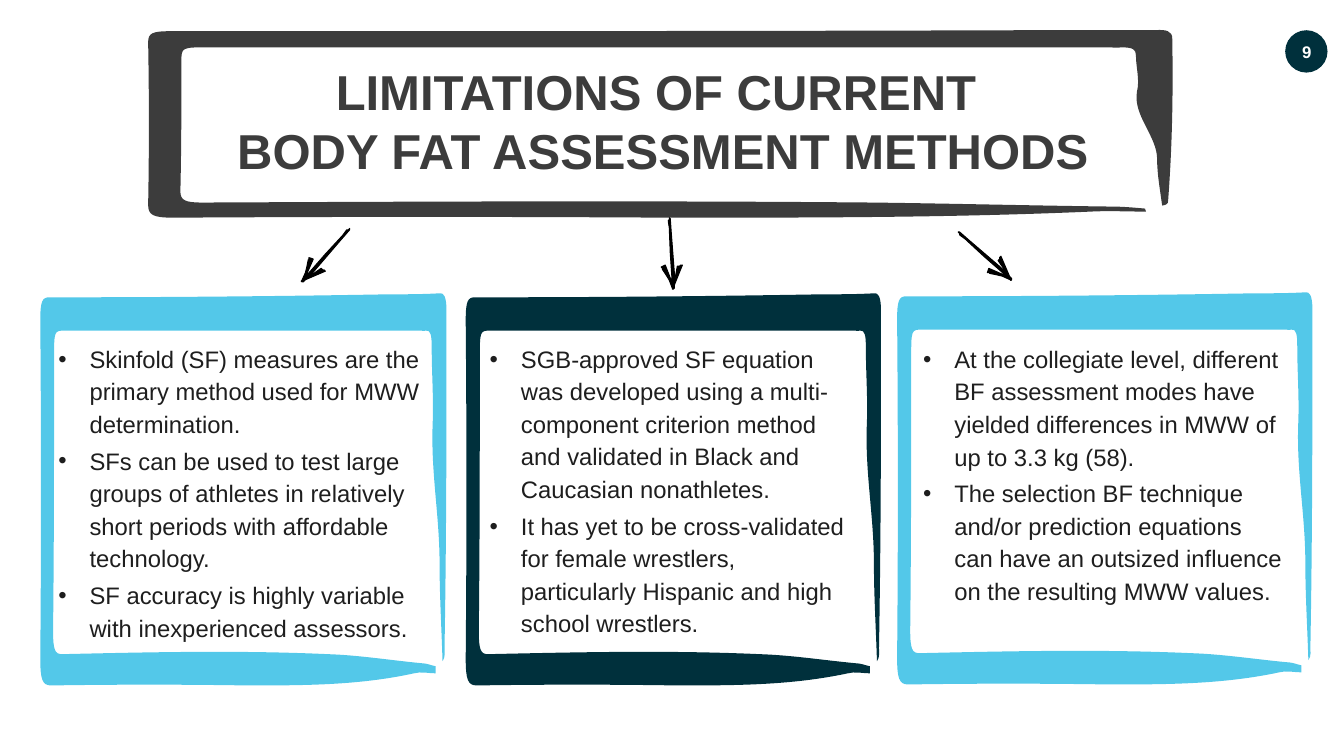
"""Build a slide on the limitations of current body fat assessment methods."""
from dataclasses import dataclass

from lxml import etree
from pptx import Presentation
from pptx.dml.color import RGBColor
from pptx.enum.shapes import MSO_SHAPE
from pptx.enum.text import MSO_ANCHOR, PP_ALIGN
from pptx.oxml.ns import qn
from pptx.util import Pt

CENTER, LEFT = PP_ALIGN.CENTER, PP_ALIGN.LEFT
TOP, MIDDLE = MSO_ANCHOR.TOP, MSO_ANCHOR.MIDDLE
OVAL = MSO_SHAPE.OVAL
PX = 9144
SLIDE_SIZE = (1333.33, 750)
BULLET_INDENT = 31


@dataclass(frozen=True)
class Theme:
    """Colours, font and type sizes."""
    font: str = "Arial"
    charcoal: str = "3C3C3C"
    sky: str = "53C8E9"
    navy: str = "00303C"
    ink: str = "1E1E1E"
    black: str = "000000"
    white: str = "FFFFFF"
    title_size: float = 35
    title_leading: float = 42
    body_size: float = 17
    body_leading: float = 23.25
    body_gap: float = 3
    number_size: float = 12
    arrow_line: float = 0.75


THEME = Theme()

TITLE = ["LIMITATIONS OF CURRENT ", "BODY FAT ASSESSMENT METHODS"]
TITLE_AREA = (170, 56, 976, 128)
PAGE_NUMBER = "9"
BADGE_AREA = (1275, 30, 42, 42)
NUMBER_AREA = (1265, 31, 63, 40)

CARDS = [
    {"corner": (40, 290), "width": 403, "color": THEME.sky, "text_area": (48, 333, 381, 310),
     "points": [
         "Skinfold (SF) measures are the primary method used for MWW determination.",
         "SFs can be used to test large groups of athletes in relatively short periods "
         "with affordable technology.",
         "SF accuracy is highly variable with inexperienced assessors."]},
    {"corner": (462, 290), "width": 412, "color": THEME.navy, "text_area": (476, 333, 382, 304),
     "points": [
         "SGB-approved SF equation was developed using a multi-component criterion method "
         "and validated in Black and Caucasian nonathletes.",
         "It has yet to be cross-validated for female wrestlers, particularly Hispanic "
         "and high school wrestlers."]},
    {"corner": (890, 289), "width": 412, "color": THEME.sky, "text_area": (906, 333, 379, 272),
     "points": [
         "At the collegiate level, different BF assessment modes have yielded differences "
         "in MWW of up to 3.3 kg (58).",
         "The selection BF technique and/or prediction equations can have an outsized "
         "influence on the resulting MWW values."]},
]

ARROWS = [((656, 216), 0), ((967, 218), 315), ((313, 218), 45)]

BANNER_CURVES = [
    (1137, 210),
    (1119, 210), (1100, 209), (1082, 210), (943, 216), (804, 216), (665, 216),
    (501, 215), (337, 215), (172, 216), (151, 216), (147, 213), (147, 203),
    (148, 150), (148, 96), (147, 42), (147, 33), (151, 31), (169, 31),
    (453, 31), (736, 31), (1020, 30), (1061, 30), (1103, 30), (1146, 30),
    (1157, 29), (1163, 31), (1163, 38), (1164, 91), (1163, 145), (1159, 198),
    (1159, 200), (1160, 203), (1153, 204), (1151, 189), (1148, 173), (1148, 158),
    (1148, 135), (1124, 115), (1128, 91), (1131, 79), (1127, 67), (1127, 55),
    (1127, 49), (1124, 47), (1112, 47), (1109, 48), (1104, 47), (1100, 47),
    (802, 47), (505, 47), (208, 47), (180, 47), (180, 47), (180, 61),
    (180, 104), (180, 147), (179, 190), (179, 199), (184, 201), (201, 201),
    (423, 200), (645, 199), (866, 201), (945, 202), (1024, 204), (1102, 205),
    (1114, 205), (1125, 206), (1136, 207), (1136, 208), (1137, 209), (1137, 210),
]
CARD_WIDTH = 412
CARD_CURVES = [
    (401, 378),
    (394, 378), (386, 376), (379, 378), (323, 390), (267, 390), (210, 390),
    (144, 389), (77, 389), (11, 390), (2, 390), (0, 384), (0, 363),
    (1, 252), (1, 140), (0, 28), (0, 9), (2, 5), (9, 5),
    (124, 5), (239, 4), (354, 2), (371, 2), (387, 2), (405, 1),
    (409, 0), (412, 4), (412, 18), (412, 130), (412, 242), (410, 353),
    (410, 357), (411, 362), (408, 366), (407, 333), (405, 301), (405, 270),
    (405, 221), (396, 179), (398, 130), (399, 105), (397, 80), (397, 54),
    (397, 43), (396, 37), (391, 38), (390, 39), (388, 38), (386, 38),
    (266, 38), (145, 38), (25, 38), (14, 38), (14, 38), (14, 67),
    (14, 157), (14, 246), (13, 336), (13, 355), (15, 359), (22, 359),
    (112, 357), (202, 355), (292, 359), (323, 360), (355, 365), (387, 368),
    (392, 368), (396, 370), (401, 371), (401, 374), (401, 376), (401, 378),
]
ARROW_POINTS = [
    (21, 47), (13, 67), (13, 70), (12, 71), (11, 71), (11, 70), (8, 62), (5, 57),
    (1, 51), (2, 51), (0, 49), (2, 48), (3, 50), (2, 48), (4, 47), (11, 65),
    (9, 35), (8, 10), (7, 3), (8, 2), (8, 0), (9, 1), (10, 15), (13, 54),
    (13, 61), (14, 59), (16, 48), (18, 48), (16, 54), (18, 50), (19, 47),
]


def rgb(color):
    """Turn a hex string into a colour."""
    return RGBColor.from_string(color)


def paint(shape, color):
    """Give a shape a flat fill without line or shadow."""
    shape.shadow.inherit = False
    shape.fill.solid()
    shape.fill.fore_color.rgb = rgb(color)
    shape.line.fill.background()


def add_outline(page, points, corner, color, stretch=1):
    """Draw a closed outline from points relative to a corner."""
    placed = [(round((corner[0] + x * stretch) * PX), (corner[1] + y) * PX) for x, y in points]
    builder = page.shapes.build_freeform(*placed[0])
    builder.add_line_segments(placed[1:], close=True)
    shape = builder.convert_to_shape()
    paint(shape, color)
    return shape


def add_curved_outline(page, curves, corner, color, stretch=1):
    """Draw a closed outline of cubic curves relative to a corner."""
    shape = add_outline(page, curves[::3], corner, color, stretch)
    segments = list(shape._element.iter(qn("a:lnTo")))
    for index, segment in enumerate(segments):
        segment.tag = qn("a:cubicBezTo")
        controls = curves[3 * index + 1:3 * index + 3]
        for place, (x, y) in enumerate(controls):
            point = etree.Element(qn("a:pt"))
            point.set("x", str(round((corner[0] + x * stretch) * PX) - shape.left))
            point.set("y", str((corner[1] + y) * PX - shape.top))
            segment.insert(place, point)


def add_text(page, area, lines, size, color, bold=False, align=CENTER,
             anchor=TOP, leading=None, gap=None, bullets=False):
    """Add a text box with one paragraph per line."""
    box = page.shapes.add_textbox(*(length * PX for length in area))
    frame = box.text_frame
    frame.word_wrap = True
    frame.vertical_anchor = anchor
    for index, line in enumerate(lines):
        para = frame.paragraphs[0] if index == 0 else frame.add_paragraph()
        if bullets:
            properties = para._p.get_or_add_pPr()
            properties.set("marL", str(BULLET_INDENT * PX))
            properties.set("indent", str(-BULLET_INDENT * PX))
            etree.SubElement(properties, qn("a:buFont")).set("typeface", THEME.font)
            etree.SubElement(properties, qn("a:buChar")).set("char", "•")
        para.alignment = align
        if leading:
            para.line_spacing = Pt(leading)
        if gap:
            para.space_after = Pt(gap)
        span = para.add_run()
        span.text = line
        span.font.name = THEME.font
        span.font.size = Pt(size)
        span.font.bold = bold
        span.font.color.rgb = rgb(color)


def main():
    """Compose and save the slide."""
    deck = Presentation()
    deck.slide_width, deck.slide_height = (round(length * PX) for length in SLIDE_SIZE)
    page = deck.slides.add_slide(deck.slide_layouts[6])

    badge = page.shapes.add_shape(OVAL, *(length * PX for length in BADGE_AREA))
    paint(badge, THEME.navy)
    add_curved_outline(page, BANNER_CURVES, (0, 0), THEME.charcoal)
    add_text(page, TITLE_AREA, TITLE, THEME.title_size, THEME.charcoal,
             bold=True, leading=THEME.title_leading)
    for card in CARDS:
        add_curved_outline(page, CARD_CURVES, card["corner"], card["color"],
                           stretch=card["width"] / CARD_WIDTH)
    for card in CARDS:
        add_text(page, card["text_area"], card["points"], THEME.body_size, THEME.ink,
                 align=LEFT, leading=THEME.body_leading, gap=THEME.body_gap, bullets=True)
    for corner, turn in ARROWS:
        arrow = add_outline(page, ARROW_POINTS, corner, THEME.black)
        arrow.line.color.rgb = rgb(THEME.black)
        arrow.line.width = Pt(THEME.arrow_line)
        arrow.rotation = turn
    add_text(page, NUMBER_AREA, [PAGE_NUMBER], THEME.number_size, THEME.white,
             bold=True, anchor=MIDDLE)
    deck.save("out.pptx")


if __name__ == "__main__":
    main()
